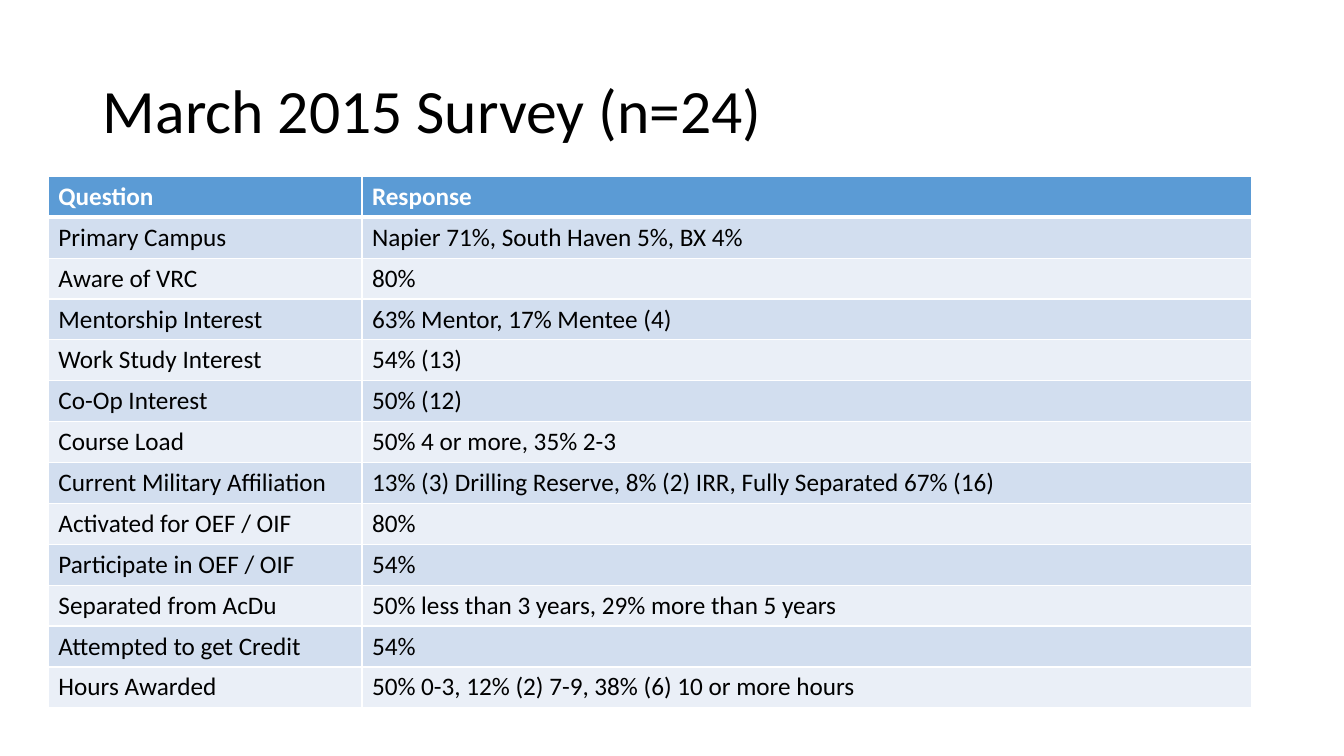
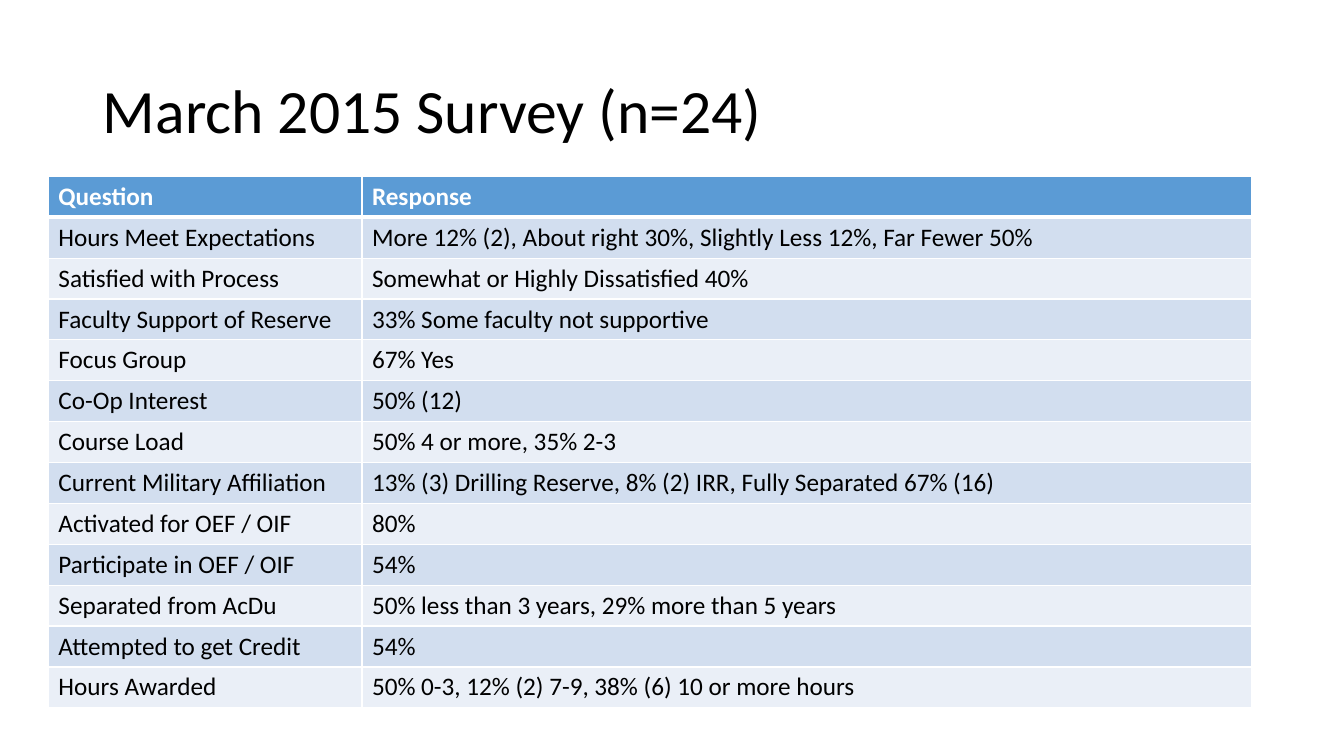
"""Build two survey result slides, each with a title and a banded table."""
from lxml.etree import SubElement
from pptx import Presentation
from pptx.dml.color import RGBColor
from pptx.enum.text import MSO_ANCHOR as Anchor, MSO_AUTO_SIZE as AutoSize, PP_ALIGN as Align
from pptx.oxml.ns import qn
from pptx.util import Inches, Pt

FONT = "Calibri"
BLACK, WHITE = "000000", "FFFFFF"
HEADER_FILL = "5B9BD5"
BAND_FILLS = ("D2DEEF", "EAEFF7")
TITLE = "March 2015 Survey (n=24)"
TITLE_PLACE = {"left": 0.92, "top": 0.4, "width": 11.5, "height": 1.45}
TITLE_FRAME = {"vertical_anchor": Anchor.MIDDLE, "word_wrap": True, "auto_size": AutoSize.NONE}
TITLE_PARAGRAPH = {"alignment": Align.LEFT, "line_spacing": 0.9}
TABLE_LEFT, TABLE_TOP, TABLE_HEIGHT = 0.48, 1.75, 5.27
COLUMN_WIDTHS = (3.11, 8.82)
HEADINGS = ("Question", "Response")

CAMPUS_ROWS = [
    ("Primary Campus", "Napier 71%, South Haven 5%, BX 4%"),
    ("Aware of VRC", "80%"),
    ("Mentorship Interest", "63% Mentor, 17% Mentee (4)"),
    ("Work Study Interest", "54% (13)"),
]
SATISFACTION_ROWS = [
    ("Hours Meet Expectations", "More 12% (2), About right 30%, Slightly Less 12%, Far Fewer 50%"),
    ("Satisfied with Process", "Somewhat or Highly Dissatisfied 40%"),
    ("Faculty Support of Reserve", "33% Some faculty not supportive"),
    ("Focus Group", "67% Yes"),
]
SHARED_ROWS = [
    ("Co-Op Interest", "50% (12)"),
    ("Course Load", "50% 4 or more, 35% 2-3"),
    ("Current Military Affiliation", "13% (3) Drilling Reserve, 8% (2) IRR, Fully Separated 67% (16)"),
    ("Activated for OEF / OIF", "80%"),
    ("Participate in OEF / OIF", "54%"),
    ("Separated from AcDu", "50% less than 3 years, 29% more than 5 years"),
    ("Attempted to get Credit", "54%"),
    ("Hours Awarded", "50% 0-3, 12% (2) 7-9, 38% (6) 10 or more hours"),
]


def color(value):
    """Turn a hex string into a colour."""
    return RGBColor.from_string(value)


def set_values(target, values):
    """Set each named attribute of the target."""
    for name, value in values.items():
        setattr(target, name, value)


def write_text(frame, text, size, ink, bold=False):
    """Write one formatted span and return its paragraph."""
    para = frame.paragraphs[0]
    span = para.add_run()
    span.text = text
    set_values(span.font, {"name": FONT, "size": Pt(size), "bold": bold})
    span.font.color.rgb = color(ink)
    return para


def add_title(page):
    """Place and fill the title placeholder."""
    box = page.shapes.title
    set_values(box, {name: Inches(value) for name, value in TITLE_PLACE.items()})
    set_values(box.text_frame, TITLE_FRAME)
    para = write_text(box.text_frame, TITLE, 44, BLACK)
    set_values(para, TITLE_PARAGRAPH)


def add_borders(cell, top, bottom):
    """Draw white cell borders with the given top and bottom widths in points."""
    properties = cell._tc.get_or_add_tcPr()
    for side, width in {"L": 1, "R": 1, "T": top, "B": bottom}.items():
        line = SubElement(properties, qn(f"a:ln{side}"), w=str(Pt(width)))
        fill = SubElement(line, qn("a:solidFill"))
        SubElement(fill, qn("a:srgbClr"), val=WHITE)


def fill_cell(cell, text, row_number):
    """Write and style one cell according to its row."""
    header = row_number == 0
    add_borders(cell, 3 if row_number == 1 else 1, 3 if header else 1)
    cell.fill.solid()
    cell.fill.fore_color.rgb = color(HEADER_FILL if header else BAND_FILLS[(row_number - 1) % 2])
    write_text(cell.text_frame, text, 18, WHITE if header else BLACK, header)


def add_survey_table(page, answers):
    """Add the question and response table."""
    rows = [HEADINGS, *answers]
    frame = page.shapes.add_table(
        len(rows), len(HEADINGS), Inches(TABLE_LEFT), Inches(TABLE_TOP),
        Inches(sum(COLUMN_WIDTHS)), Inches(TABLE_HEIGHT))
    table = frame.table
    for column, width in zip(table.columns, COLUMN_WIDTHS):
        column.width = Inches(width)
    for row_number, texts in enumerate(rows):
        for cell, text in zip(table.rows[row_number].cells, texts):
            fill_cell(cell, text, row_number)


def main():
    """Build and save the deck."""
    deck = Presentation()
    set_values(deck, {"slide_width": Inches(13.33), "slide_height": Inches(7.5)})
    title_only = deck.slide_layouts.get_by_name("Title Only")
    for opening_rows in (CAMPUS_ROWS, SATISFACTION_ROWS):
        page = deck.slides.add_slide(title_only)
        add_title(page)
        add_survey_table(page, opening_rows + SHARED_ROWS)
    deck.save("out.pptx")


if __name__ == "__main__":
    main()
